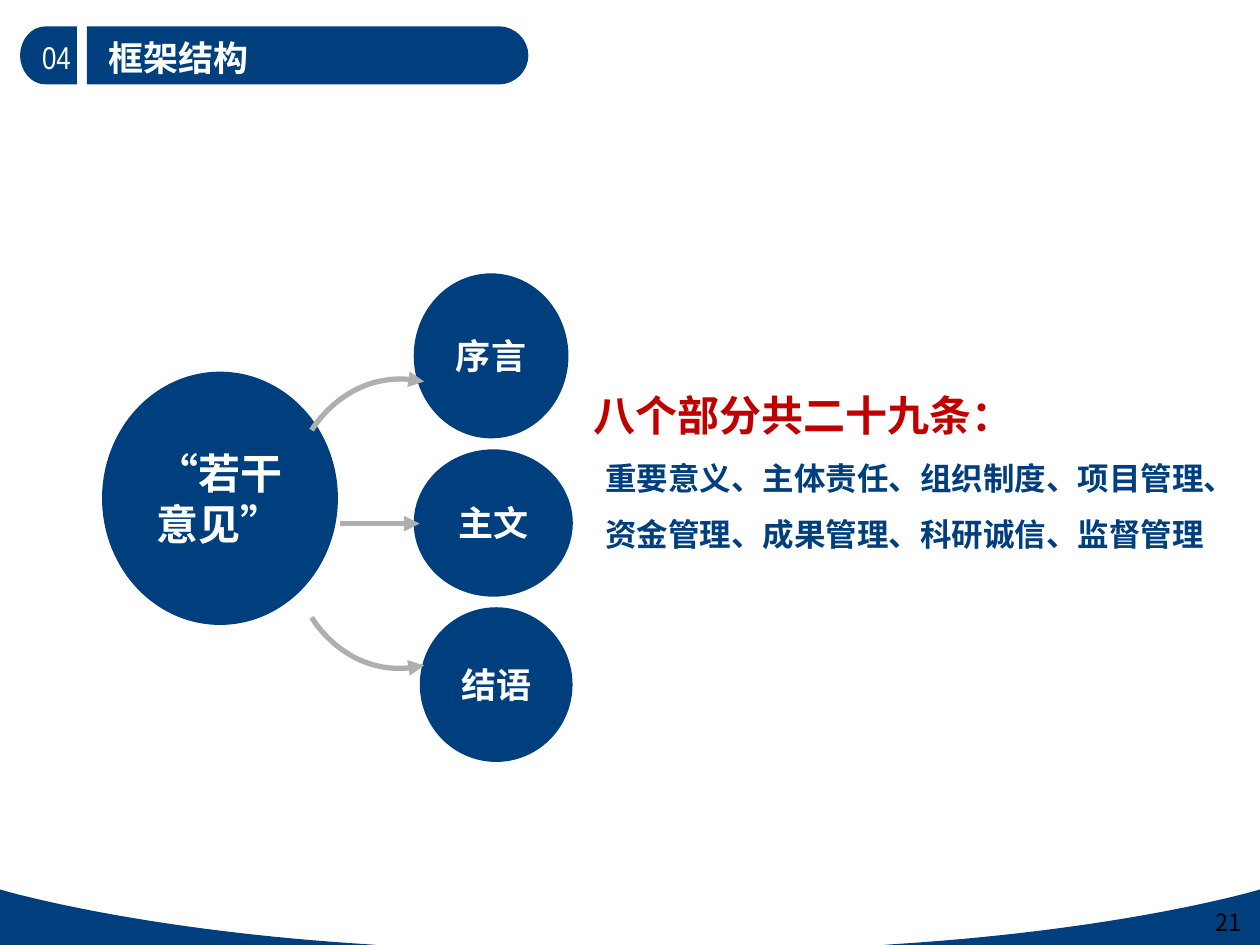
"""Build the framework structure slide: one source circle leading to three parts."""
import lxml.etree
import pptx
import pptx.dml.color
import pptx.enum.shapes
import pptx.enum.text
import pptx.oxml.ns
import pptx.util

Pt = pptx.util.Pt
qn = pptx.oxml.ns.qn
ALIGN = pptx.enum.text.PP_ALIGN
ANCHOR = pptx.enum.text.MSO_ANCHOR
FIT = pptx.enum.text.MSO_AUTO_SIZE.SHAPE_TO_FIT_TEXT
COLORS = {"navy": "003F7D", "gray": "AFAFAF", "red": "C00000", "white": "FFFFFF", "black": "000000"}
CJK = "Noto Sans CJK SC"
WIDTH, HEIGHT = 720, 540


def rgb(name):
    return pptx.dml.color.RGBColor.from_string(COLORS[name])


def apply(target, values):
    for key, value in values.items():
        setattr(target, key, value)


def write(paragraph, text, color, font, layout=None):
    run = paragraph.add_run()
    run.text = text
    apply(run.font, font)
    run.font.color.rgb = rgb(color)
    lxml.etree.SubElement(run.font._element, qn("a:ea")).set("typeface", CJK)
    apply(paragraph, layout or {})


def paragraphs(frame, count):
    return [frame.paragraphs[0]] + [frame.add_paragraph() for _ in range(count - 1)]


def paint(shape):
    shape.shadow.inherit = False
    shape.fill.solid()
    shape.fill.fore_color.rgb = rgb("navy")
    shape.line.fill.background()


def add_circle(slide, box, lines, font, wrap):
    circle = slide.shapes.add_shape(pptx.enum.shapes.MSO_SHAPE.OVAL, *map(Pt, box))
    paint(circle)
    apply(circle.text_frame, {"word_wrap": wrap, "vertical_anchor": ANCHOR.MIDDLE})
    for paragraph, line in zip(paragraphs(circle.text_frame, len(lines)), lines):
        write(paragraph, line, "white", font, {"alignment": ALIGN.CENTER})


def add_text(slide, box, frame_format):
    frame = slide.shapes.add_textbox(*map(Pt, box)).text_frame
    apply(frame, frame_format)
    return frame


def add_outline(slide, start, segments, close=True):
    """Draw lines (one point) and Bezier curves (three points) from start."""
    builder = slide.shapes.build_freeform(Pt(start[0]), Pt(start[1]))
    builder.add_line_segments([(Pt(s[-1][0]), Pt(s[-1][1])) for s in segments], close=close)
    outline = builder.convert_to_shape()
    for line, segment in zip(list(outline._element.iter(qn("a:lnTo"))), segments):
        if len(segment) == 3:
            line.tag = qn("a:cubicBezTo")
            line.clear()
            for x, y in segment:
                point = lxml.etree.SubElement(line, qn("a:pt"))
                point.set("x", str(Pt(x) - outline.left))
                point.set("y", str(Pt(y) - outline.top))
    return outline


def style_arrow(arrow):
    arrow.line.color.rgb = rgb("gray")
    arrow.line.width = Pt(3)
    head = lxml.etree.SubElement(arrow.line._get_or_add_ln(), qn("a:headEnd"))
    head.set("type", "triangle")


def add_straight_arrow(slide, tip, tail):
    arrow = slide.shapes.add_connector(
        pptx.enum.shapes.MSO_CONNECTOR.STRAIGHT, *map(Pt, tip + tail))
    style_arrow(arrow)
    lxml.etree.SubElement(arrow._element.spPr, qn("a:effectLst"))


def add_curved_arrow(slide, tip, control, tail):
    arrow = add_outline(slide, tip, [(control, tail, tail)], close=False)
    arrow.shadow.inherit = False
    arrow.fill.background()
    style_arrow(arrow)


def add_half_pill(slide, flat, shoulder, tip):
    top, middle, bottom = 15.1, 31.7, 48.2
    bend = shoulder + 0.55 * (tip - shoulder)
    rise = 0.55 * (middle - top)
    paint(add_outline(slide, (flat, top), [
        ((shoulder, top),),
        ((bend, top), (tip, middle - rise), (tip, middle)),
        ((tip, middle + rise), (bend, bottom), (shoulder, bottom)),
        ((flat, bottom),),
    ]))


def add_corner_wave(slide, mirrored):
    def place(x, y):
        return (WIDTH - x if mirrored else x), y

    paint(add_outline(slide, place(0, 508.3), [
        (place(0, HEIGHT),),
        (place(215.3, HEIGHT),),
        (place(205.2, 539.3),),
        (place(127.4, 534.2), place(58.3, 523.4), place(7.9, 510.5)),
    ]))


def add_summary(slide):
    frame = add_text(slide, (331.9, 204.5, 365, 116.6), {"word_wrap": True, "auto_size": FIT})
    heading, *details = paragraphs(frame, 3)
    spacing = {"line_spacing": 1.5}
    write(heading, "八个部分共二十九条：", "red", {"name": CJK, "size": Pt(24), "bold": True}, spacing)
    lines = ("重要意义、主体责任、组织制度、项目管理、", "资金管理、成果管理、科研诚信、监督管理")
    for paragraph, line in zip(details, lines):
        write(paragraph, line, "navy", {"name": CJK, "size": Pt(18), "bold": True},
              {"level": 1, **spacing})
        properties = paragraph._p.get_or_add_pPr()
        properties.set("marL", str(Pt(21.3)))
        properties.set("indent", str(Pt(-14.4)))


def add_header(slide):
    add_half_pill(slide, 49.7, 285.1, 301.9)
    add_half_pill(slide, 43.9, 25.9, 11.5)
    label = {"word_wrap": False, "auto_size": FIT}
    title = add_text(slide, (54.7, 17.3, 95, 31.7), label)
    write(title.paragraphs[0], "框架结构", "white", {"name": CJK, "size": Pt(20), "bold": True})
    number = add_text(slide, (17, 18, 33.1, 28.8), label)
    write(number.paragraphs[0], "04", "white", {"name": "Arial Narrow", "size": Pt(18)})


def add_footer(slide):
    for mirrored in (True, False):
        add_corner_wave(slide, mirrored)
    page = add_text(slide, (552.2, 516.2, 162, 21.6), {
        "word_wrap": True, "vertical_anchor": ANCHOR.MIDDLE,
        "margin_left": Pt(5), "margin_right": Pt(5),
        "margin_top": Pt(2.9), "margin_bottom": Pt(2.9)})
    write(page.paragraphs[0], "21", "black", {"name": CJK, "size": Pt(13.5)},
          {"alignment": ALIGN.RIGHT})


def main():
    deck = pptx.Presentation()
    apply(deck, {"slide_width": Pt(WIDTH), "slide_height": Pt(HEIGHT)})
    slide = deck.slides.add_slide(deck.slide_layouts[6])

    add_circle(slide, (58.3, 212.4, 134.8, 144.7), ("“若干", "意见”"),
               {"name": "Arial", "size": Pt(24), "bold": True}, True)
    parts = {
        "序言": (236.4, 156.2, 88.4, 94.3),
        "主文": (236.4, 256.8, 90.9, 84.2),
        "结语": (239.9, 347, 87.3, 88.4),
    }
    for part, box in parts.items():
        add_circle(slide, box, (part,), {"name": CJK, "size": Pt(20), "bold": True}, False)

    add_straight_arrow(slide, (239.8, 299.2), (194.4, 299.2))
    add_curved_arrow(slide, (242.4, 218), (199.4, 208.8), (178.1, 245.8))
    add_curved_arrow(slide, (242.4, 380.2), (199.4, 390.2), (178.1, 352.8))
    add_summary(slide)
    add_header(slide)
    add_footer(slide)
    deck.save("out.pptx")


if __name__ == "__main__":
    main()
